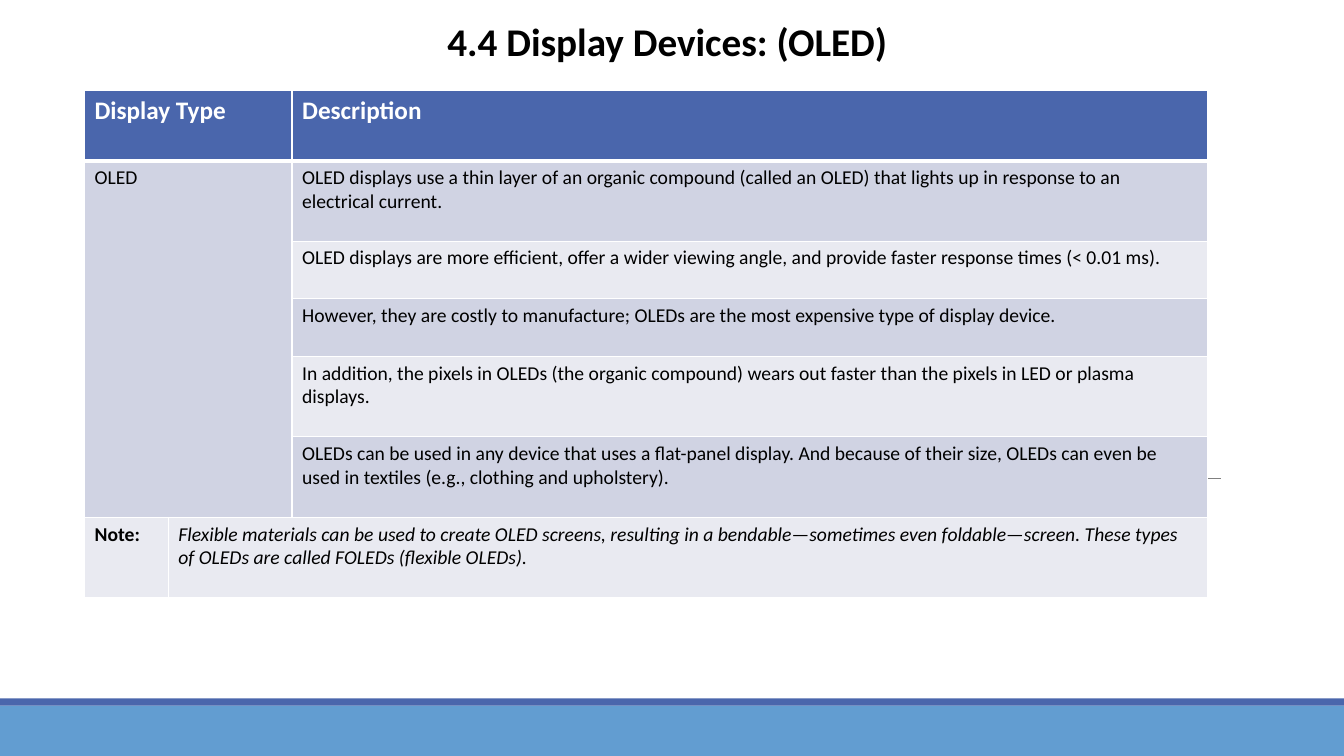
from lxml.etree import SubElement
from pptx import Presentation
from pptx.dml.color import RGBColor
from pptx.enum.shapes import MSO_CONNECTOR, MSO_SHAPE
from pptx.enum.text import MSO_AUTO_SIZE, PP_ALIGN
from pptx.oxml import parse_xml
from pptx.oxml.ns import nsdecls, qn
from pptx.util import Cm, Pt

BLUE, LIGHT_BLUE = "4A66AC", "629DD1"
DARK_BAND, LIGHT_BAND = "D0D3E3", "E9EAF1"
WHITE, BLACK, GRAY = "FFFFFF", "000000", "808080"


def paint(color_owner, color):
    """Give a fill a solid colour, or a font its colour."""
    if hasattr(color_owner, "solid"):
        color_owner.solid()
        color_owner.fore_color.rgb = RGBColor.from_string(color)
    else:
        color_owner.color.rgb = RGBColor.from_string(color)


def write(text_frame, text, size, color=BLACK, bold=False, italic=False):
    text_frame.text = text
    font = text_frame.paragraphs[0].runs[0].font
    font.name, font.size, font.bold, font.italic = "Calibri", Pt(size), bold, italic
    paint(font, color)


presentation = Presentation()
presentation.slide_width = Cm(33.87)
presentation.slide_height = Cm(19.05)
slide = presentation.slides.add_slide(presentation.slide_layouts[6])

# Footer bands and rule
for top, height, color in [(17.78, 1.27, LIGHT_BLUE), (17.6, 0.18, BLUE)]:
    band = slide.shapes.add_shape(
        MSO_SHAPE.RECTANGLE, Cm(0), Cm(top), Cm(33.87), Cm(height))
    band.shadow.inherit = False
    paint(band.fill, color)
    band.line.fill.background()

rule = slide.shapes.add_connector(
    MSO_CONNECTOR.STRAIGHT, Cm(3.35), Cm(12.06), Cm(30.78), Cm(12.06))
rule.line.width = Pt(0.5)
paint(rule.line.fill, GRAY)
SubElement(rule._element.spPr, qn("a:effectLst"))

# Title
title = slide.shapes.add_textbox(Cm(10.77), Cm(0.3), Cm(12.09), Cm(1.45))
title.text_frame.word_wrap = True
title.text_frame.auto_size = MSO_AUTO_SIZE.SHAPE_TO_FIT_TEXT
write(title.text_frame, "4.4 Display Devices: (OLED)", 28, bold=True)
title.text_frame.paragraphs[0].alignment = PP_ALIGN.CENTER

# Table
descriptions = [
    "OLED displays use a thin layer of an organic compound (called an OLED) "
    "that lights up in response to an electrical current.",
    "OLED displays are more efficient, offer a wider viewing angle, "
    "and provide faster response times (< 0.01 ms).",
    "However, they are costly to manufacture; OLEDs are the most expensive "
    "type of display device.",
    "In addition, the pixels in OLEDs (the organic compound) wears out faster "
    "than the pixels in LED or plasma displays.",
    "OLEDs can be used in any device that uses a flat-panel display. And because "
    "of their size, OLEDs can even be used in textiles (e.g., clothing and upholstery).",
]
note = (
    "Flexible materials can be used to create OLED screens, resulting in a "
    "bendable—sometimes even foldable—screen. These types of OLEDs are called "
    "FOLEDs (flexible OLEDs).")
column_widths = [2.11, 3.12, 23.06]
row_heights = [1.76, 2.03, 1.45, 1.45, 2.03, 2.03, 2.03]

table = slide.shapes.add_table(
    len(row_heights), len(column_widths), Cm(2.13), Cm(2.29),
    Cm(sum(column_widths)), Cm(sum(row_heights))).table
for column, width in zip(table.columns, column_widths):
    column.width = Cm(width)
for row, height in zip(table.rows, row_heights):
    row.height = Cm(height)

for row_index, row in enumerate(table.rows):
    for column_index, cell in enumerate(row.cells):
        if row_index == 0:
            color = BLUE
        elif row_index % 2 or (column_index < 2 and row_index < 6):
            color = DARK_BAND
        else:
            color = LIGHT_BAND
        paint(cell.fill, color)
        properties = cell._tc.get_or_add_tcPr()
        for position, side in enumerate(["L", "R", "T", "B"]):
            header_edge = (row_index, side) in [(0, "B"), (1, "T")]
            width = Pt(3 if header_edge else 1)
            properties.insert(position, parse_xml(
                f'<a:ln{side} {nsdecls("a")} w="{width}"><a:solidFill>'
                f'<a:srgbClr val="{WHITE}"/></a:solidFill></a:ln{side}>'))

for first, last in [((0, 0), (0, 1)), ((1, 0), (5, 1)), ((6, 1), (6, 2))]:
    table.cell(*first).merge(table.cell(*last))

write(table.cell(0, 0).text_frame, "Display Type", 18, WHITE, bold=True)
write(table.cell(0, 2).text_frame, "Description", 18, WHITE, bold=True)
write(table.cell(1, 0).text_frame, "OLED", 14)
for row_index, description in enumerate(descriptions, start=1):
    write(table.cell(row_index, 2).text_frame, description, 14)
write(table.cell(6, 0).text_frame, "Note:", 14, bold=True)
write(table.cell(6, 1).text_frame, note, 14, italic=True)

presentation.save("out.pptx")
